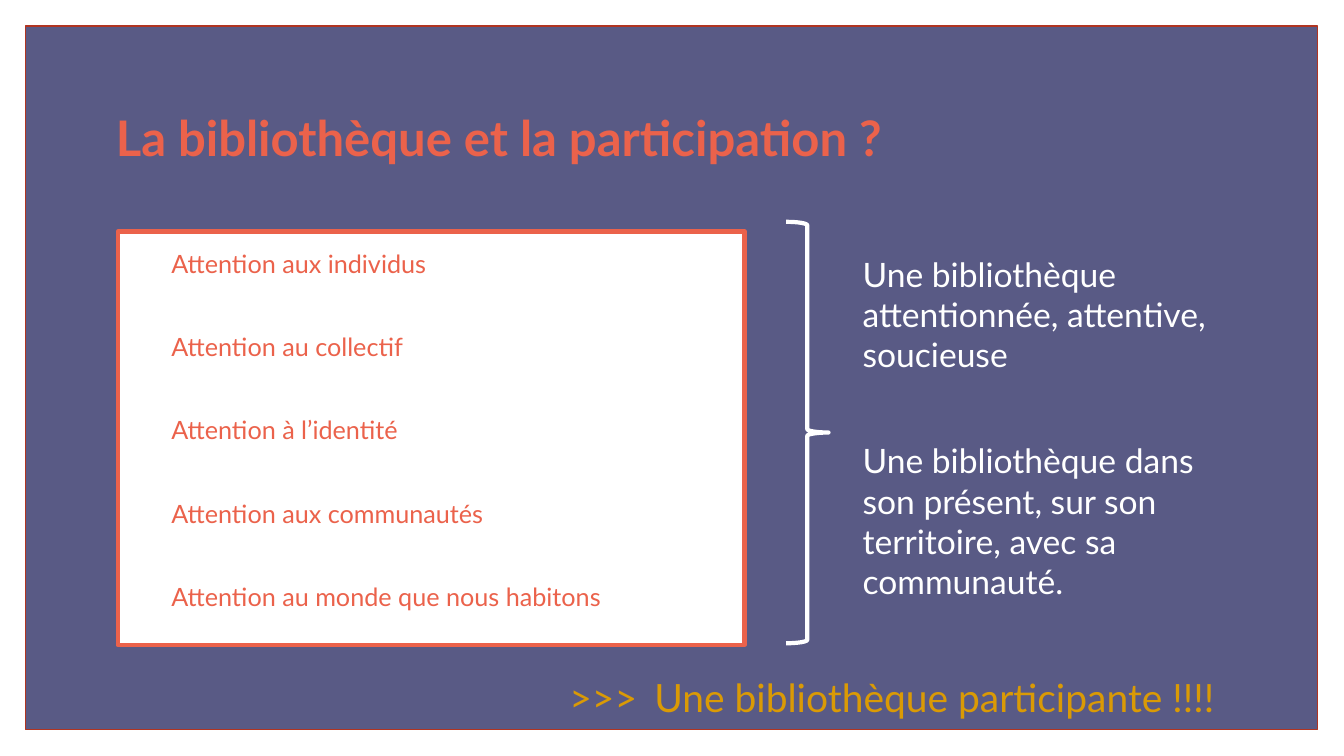
from dataclasses import dataclass

from pptx import Presentation as Deck
from pptx.dml.color import RGBColor as Color
from pptx.enum.shapes import MSO_SHAPE as Kind
from pptx.enum.text import MSO_ANCHOR as Anchor, PP_ALIGN as Align
from pptx.oxml import parse_xml as parse
from pptx.oxml.ns import nsdecls as names
from pptx.util import Cm, Pt


@dataclass(frozen=True)
class Theme:
    face: str = "Lato"
    slate: str = "595A85"
    brick: str = "B03421"
    coral: str = "EB624B"
    white: str = "FFFFFF"
    gold: str = "DA9A05"
    head: float = 35
    item: float = 18
    claim: float = 24
    motto: float = 27.8


LOOK = Theme()
INSET = Cm(0.33)


def apply(thing, form):
    for key, value in form.items():
        setattr(thing, key, value)


def place(box):
    return [Cm(side) for side in box]


def add_form(slide, kind, box, line, width, fill=None):
    form = slide.shapes.add_shape(kind, *place(box))
    form.shadow.inherit = False
    if fill:
        form.fill.solid()
        form.fill.fore_color.rgb = Color.from_string(fill)
    else:
        form.fill.background()
    form.line.color.rgb = Color.from_string(line)
    form.line.width = Pt(width)
    return form


def write(form, lines, size, tint, frame=None, para=None, bold=False):
    text = form.text_frame
    apply(text, {"word_wrap": True, "vertical_anchor": Anchor.TOP, **(frame or {})})
    for rank, line in enumerate(lines):
        part = text.add_paragraph() if rank else text.paragraphs[0]
        apply(part, {"alignment": Align.LEFT, **(para or {})})
        run = part.add_run()
        run.text = line
        apply(run.font, {"name": LOOK.face, "size": Pt(size), "bold": bold})
        run.font.color.rgb = Color.from_string(tint)


def add_text(slide, box, *args, **style):
    form = slide.shapes.add_textbox(*place(box))
    write(form, *args, **style)
    return form


def add_tab(form, stop):
    part = form.text_frame.paragraphs[0]
    part._p.get_or_add_pPr().append(parse(
        f'<a:tabLst {names("a")}><a:tab pos="{Cm(stop)}" algn="l"/></a:tabLst>'))


def main():
    deck = Deck()
    apply(deck, {"slide_width": Cm(33.87), "slide_height": Cm(19.05)})
    slide = deck.slides.add_slide(deck.slide_layouts[6])
    edges = {f"margin_{side}": INSET for side in ("left", "top", "right", "bottom")}

    add_form(slide, Kind.RECTANGLE, (0.64, 0.66, 32.56, 17.73),
             LOOK.brick, 1, LOOK.slate)
    add_text(slide, (2.59, 1.63, 27.94, 3.81),
             ["La bibliothèque et la participation ?"], LOOK.head, LOOK.coral,
             frame={**edges, "vertical_anchor": Anchor.MIDDLE},
             para={"line_spacing": 0.9}, bold=True)

    panel = add_form(slide, Kind.RECTANGLE, (2.97, 5.84, 15.8, 10.41),
                     LOOK.coral, 3.25, LOOK.white)
    cares = ["aux individus", "au collectif", "à l’identité",
             "aux communautés", "au monde que nous habitons"]
    write(panel, [f"Attention {care}" for care in cares], LOOK.item, LOOK.coral,
          frame={**edges, "margin_left": Cm(1.35)},
          para={"line_spacing": 1.1, "space_after": Pt(35.8)})

    brace = add_form(slide, Kind.RIGHT_BRACE, (19.81, 5.59, 1.07, 10.62),
                     LOOK.white, 3)
    brace.adjustments[0] = 0.08
    brace.adjustments[1] = 0.5

    add_text(slide, (21.49, 6.27, 10.26, 9.55),
             ["Une bibliothèque attentionnée, attentive, soucieuse",
              "Une bibliothèque dans son présent, sur son territoire, "
              "avec sa communauté."],
             LOOK.claim, LOOK.white,
             para={"space_before": Pt(9), "space_after": Pt(37.8)})
    motto = add_text(slide, (14.1, 16.74, 19.13, 1.65),
                     [">>>\tUne bibliothèque participante !!!!"],
                     LOOK.motto, LOOK.gold,
                     para={"line_spacing": 1.1, "space_before": Pt(9)})
    add_tab(motto, 2.14)

    deck.save("out.pptx")


if __name__ == "__main__":
    main()
